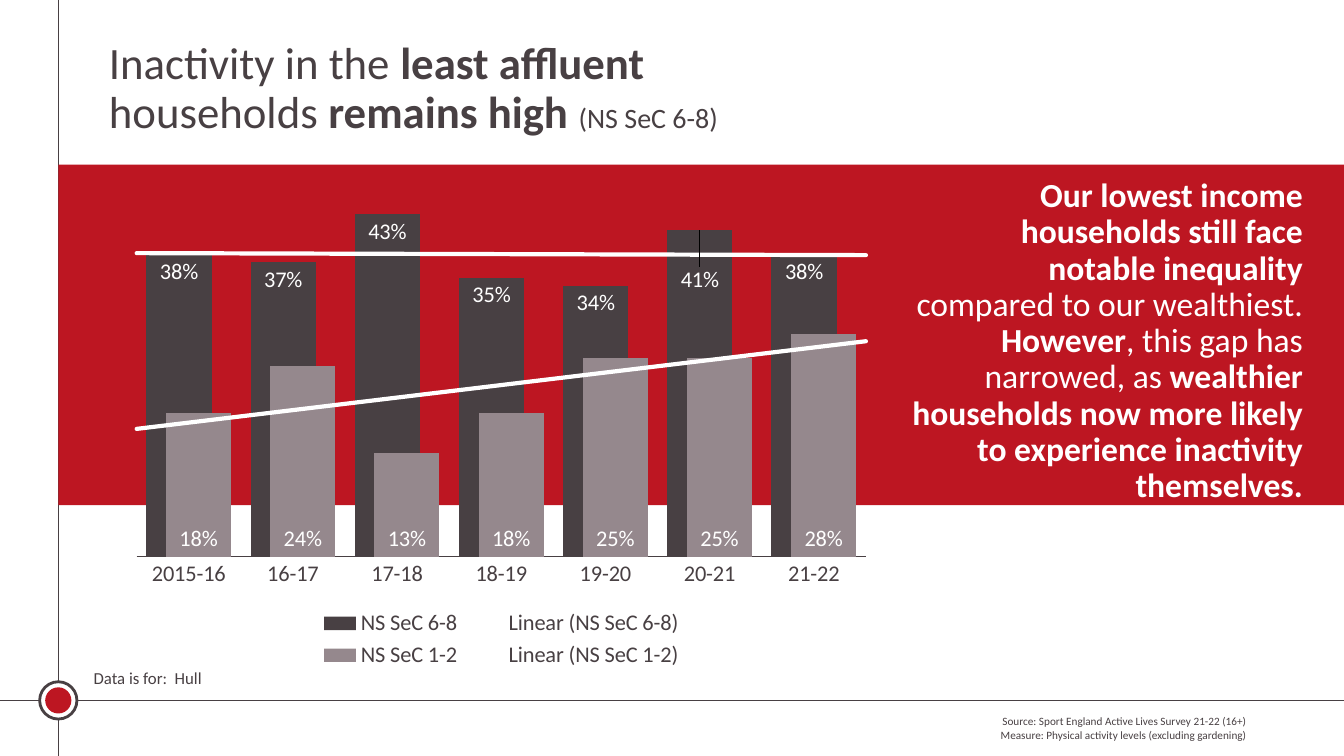
from lxml import etree
from pptx import Presentation
from pptx.chart.data import CategoryChartData
from pptx.dml.color import RGBColor
from pptx.enum.chart import XL_CHART_TYPE, XL_LABEL_POSITION, XL_LEGEND_POSITION, XL_TICK_MARK
from pptx.enum.shapes import MSO_CONNECTOR, MSO_SHAPE
from pptx.enum.text import MSO_ANCHOR, MSO_AUTO_SIZE, PP_ALIGN
from pptx.oxml import parse_xml
from pptx.oxml.ns import nsdecls, qn
from pptx.util import Cm, Pt

# Content: each paragraph is a list of (text, bold, size) runs
TITLE = [[("Inactivity in the ", False, 32), ("least affluent ", True, 32),
          ("households ", False, 32), ("remains high ", True, 32), ("(NS SeC 6-8)", False, 20)]]
MESSAGE = [[("Our lowest income households still face notable inequality ", True, 24),
            ("compared to our wealthiest. ", False, 24), ("However", True, 24),
            (", this gap has narrowed, as ", False, 24),
            ("wealthier households now more likely to experience inactivity themselves.", True, 24)]]
AREA = [[("Data is for:  Hull", False, 12)]]
SOURCE = [[("Source: Sport England Active Lives Survey 21-22 (16+)", False, 8)],
          [("Measure: Physical activity levels (excluding gardening)", False, 8)]]
YEARS = ["2015-16", "16-17", "17-18", "18-19", "19-20", "20-21", "21-22"]

DARK = RGBColor(0x48, 0x40, 0x43)
GREY = RGBColor(0x95, 0x88, 0x8D)
RED = RGBColor(0xBD, 0x16, 0x22)
WHITE = RGBColor(0xFF, 0xFF, 0xFF)
FONT = "Calibri"

SERIES = [
    ("NS SeC 6-8", [0.38, 0.37, 0.43, 0.35, 0.34, 0.41, 0.38], DARK, XL_LABEL_POSITION.INSIDE_END),
    ("NS SeC 1-2", [0.18, 0.24, 0.13, 0.18, 0.25, 0.25, 0.28], GREY, XL_LABEL_POSITION.INSIDE_BASE),
]
LOWERED_LABEL = 5  # 20-21, moved clear of the trend line

SLIDE_WIDTH, SLIDE_HEIGHT = Cm(33.87), Cm(19.05)
AXIS_X, AXIS_Y = Cm(1.47), Cm(17.65)  # crossing of the two frame lines


def set_format(target, values):
    for name, value in values.items():
        setattr(target, name, value)


def style_font(font, size, color, bold=False):
    set_format(font, {"name": FONT, "size": Pt(size), "bold": bold})
    font.color.rgb = color


def place(shape, left, top, width, height):
    set_format(shape, {"left": Cm(left), "top": Cm(top), "width": Cm(width), "height": Cm(height)})


def write(shape, paragraphs, color, align=PP_ALIGN.LEFT, spacing=1.0):
    frame = shape.text_frame
    set_format(frame, {"word_wrap": True, "auto_size": MSO_AUTO_SIZE.SHAPE_TO_FIT_TEXT,
                       "vertical_anchor": MSO_ANCHOR.TOP})
    for index, runs in enumerate(paragraphs):
        paragraph = frame.add_paragraph() if index else frame.paragraphs[0]
        properties = paragraph._p.get_or_add_pPr()
        properties.set("marL", "0")
        properties.set("indent", "0")
        etree.SubElement(properties, qn("a:buNone"))
        set_format(paragraph, {"alignment": align, "line_spacing": spacing, "space_before": Pt(0)})
        for text, bold, size in runs:
            run = paragraph.add_run()
            run.text = text
            style_font(run.font, size, color, bold)


def add_plain_shape(kind, left, top, width, height, fill, outline=None):
    shape = slide.shapes.add_shape(kind, left, top, width, height)
    shape.shadow.inherit = False
    shape.fill.solid()
    shape.fill.fore_color.rgb = fill
    if outline:
        shape.line.color.rgb = outline
        shape.line.width = Pt(2)
    else:
        shape.line.fill.background()


def manual_layout(**values):
    items = "".join(f'<c:{name} val="{value}"/>' for name, value in values.items())
    return parse_xml(f'<c:layout {nsdecls("c")}><c:manualLayout>{items}</c:manualLayout></c:layout>')


def linear_trend():
    return parse_xml(
        f'<c:trendline {nsdecls("c", "a")}><c:spPr><a:ln w="{Pt(3)}" cap="rnd"><a:solidFill>'
        f'<a:srgbClr val="{WHITE}"/></a:solidFill></a:ln></c:spPr>'
        '<c:trendlineType val="linear"/><c:forward val="0.5"/><c:backward val="0.5"/>'
        '<c:dispRSqr val="0"/><c:dispEq val="0"/></c:trendline>')


presentation = Presentation()
set_format(presentation, {"slide_width": SLIDE_WIDTH, "slide_height": SLIDE_HEIGHT})
slide = presentation.slides.add_slide(presentation.slide_layouts[1])
title, message = slide.placeholders

# Footer texts
for paragraphs, box, align in [
    (AREA, (2.11, 16.71, 9.22, 0.76), PP_ALIGN.LEFT),
    (SOURCE, (15.24, 17.88, 16.43, 0.94), PP_ALIGN.RIGHT),
]:
    write(slide.shapes.add_textbox(*map(Cm, box)), paragraphs, DARK, align)

# Frame lines, marker and red band
for ends in [(AXIS_X, 0, AXIS_X, SLIDE_HEIGHT), (0, AXIS_Y, SLIDE_WIDTH, AXIS_Y)]:
    line = slide.shapes.add_connector(MSO_CONNECTOR.STRAIGHT, *ends)
    line.line.color.rgb = DARK
    line.line.width = Pt(0.5)
    etree.SubElement(line._element.spPr, qn("a:effectLst"))
for diameter, fill, outline in [(Cm(0.94), WHITE, DARK), (Cm(0.66), RED, None)]:
    add_plain_shape(MSO_SHAPE.OVAL, AXIS_X - diameter // 2, AXIS_Y - diameter // 2,
                    diameter, diameter, fill, outline)
add_plain_shape(MSO_SHAPE.RECTANGLE, AXIS_X, Cm(4.15), SLIDE_WIDTH - AXIS_X, Cm(8.58), RED)

# Title and message, in front of the band
place(message, 22.68, 4.37, 10.41, 15.72)
write(message, MESSAGE, WHITE, PP_ALIGN.RIGHT, 0.9)
place(title, 2.49, 0.91, 17.09, 2.72)
write(title, TITLE, DARK, spacing=0.9)
for placeholder in (message, title):
    slide.shapes._spTree.append(placeholder._element)

# Chart
chart_data = CategoryChartData(number_format="0%")
chart_data.categories = YEARS
for name, values, _, _ in SERIES:
    chart_data.add_series(name, values)
chart = slide.shapes.add_chart(XL_CHART_TYPE.COLUMN_CLUSTERED, Cm(3.2), Cm(3.58),
                               Cm(18.87), Cm(13.39), chart_data).chart
set_format(chart, {"has_title": False, "has_legend": True})
style_font(chart.font, 14, WHITE)
set_format(chart.legend, {"position": XL_LEGEND_POSITION.BOTTOM, "include_in_layout": False})
style_font(chart.legend.font, 16, DARK)

set_format(chart.value_axis, {"visible": False, "has_major_gridlines": False,
                              "minimum_scale": 0, "maximum_scale": 0.5})
year_axis = chart.category_axis
set_format(year_axis, {"major_tick_mark": XL_TICK_MARK.NONE, "minor_tick_mark": XL_TICK_MARK.NONE})
style_font(year_axis.tick_labels.font, 16, DARK)
year_axis.format.line.color.rgb = DARK
year_axis.format.line.width = Pt(0.75)

plot = chart.plots[0]
set_format(plot, {"gap_width": 30, "overlap": 70, "vary_by_categories": False})
plot_area = chart._chartSpace.chart.plotArea
for old_layout in plot_area.findall(qn("c:layout")):
    plot_area.remove(old_layout)
plot_area.insert(0, manual_layout(layoutTarget="inner", xMode="edge", yMode="edge",
                                  x=0.013, y=0.031, w=0.974, h=0.75))

# Columns, labels and trend lines
for series, (_, _, color, position) in zip(plot.series, SERIES):
    series.format.fill.solid()
    series.format.fill.fore_color.rgb = color
    labels = series.data_labels
    set_format(labels, {"show_value": True, "position": position, "number_format": "0%",
                        "number_format_is_linked": False})
    style_font(labels.font, 16, WHITE)
    series._element.find(qn("c:cat")).addprevious(linear_trend())

high_series = plot.series[0]
lowered = high_series.points[LOWERED_LABEL].data_label
lowered.position = XL_LABEL_POSITION.INSIDE_END
style_font(lowered.font, 16, WHITE)
label_index = high_series._element.find(".//" + qn("c:dLbl")).find(qn("c:idx"))
label_index.addnext(manual_layout(x=0, y=0.06))

presentation.save("out.pptx")
